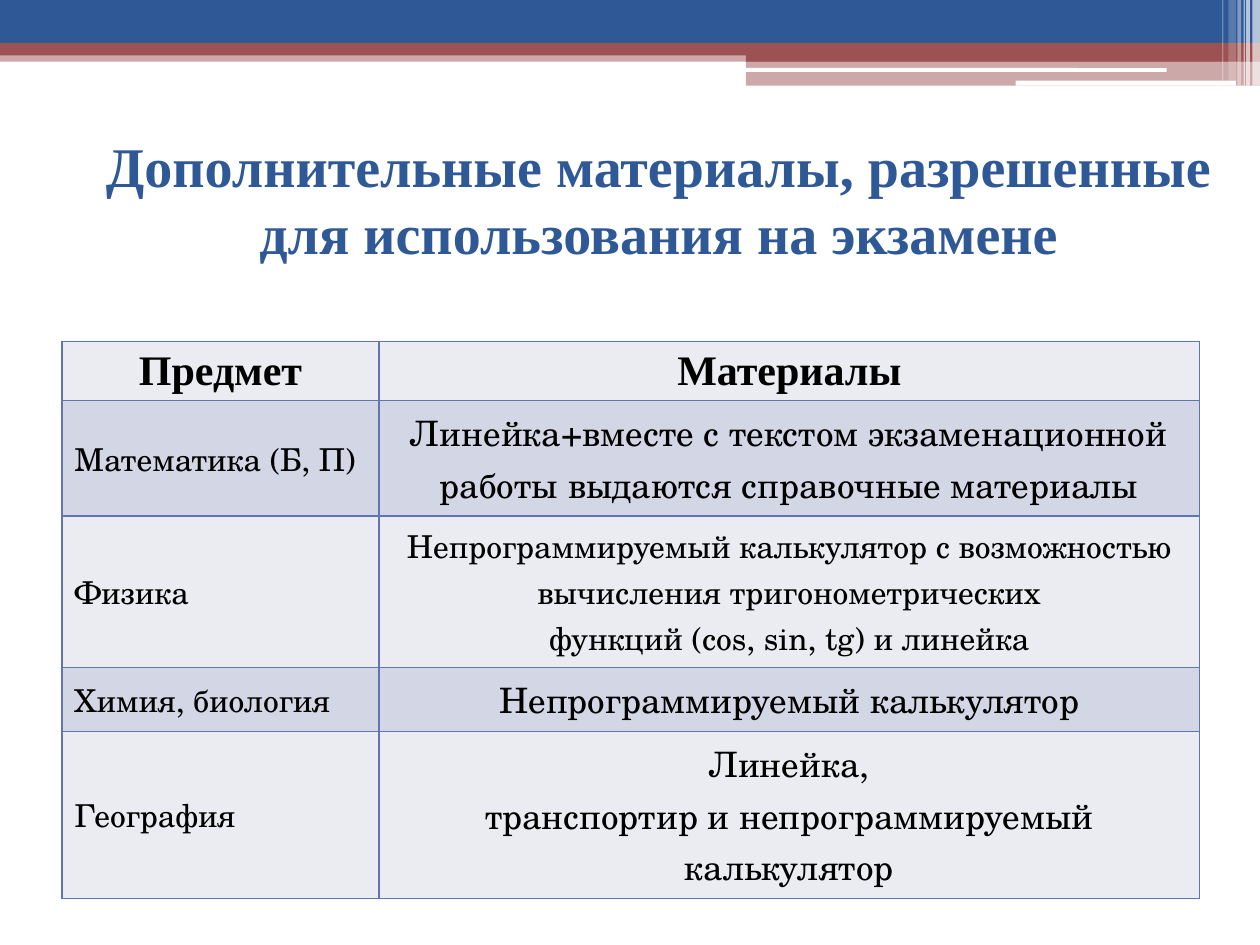
import pptx
import pptx.util
import pptx.dml.color
import pptx.enum.shapes
import pptx.enum.text
import pptx.oxml
import pptx.oxml.ns
import lxml.etree

Inches = pptx.util.Inches
Pt = pptx.util.Pt
Align = pptx.enum.text.PP_ALIGN
Anchor = pptx.enum.text.MSO_ANCHOR
Preset = pptx.enum.shapes.MSO_SHAPE

BLUE, RED, WHITE, BLACK = "2F5897", "9C5252", "FFFFFF", "000000"
BORDER, LIGHT, DARK = "6076B4", "EAECF2", "D2D6E5"
SERIF, SCHOOL = "Times New Roman", "TeX Gyre Schola"

TITLE = "Дополнительные материалы, разрешенные для использования на экзамене"

BANDS = [
    (0, 0.4, 10, 0.09, RED, 50),
    (0, 0, 10, 0.34, BLUE, 100),
    (0, 0.34, 10, 0.1, RED, 100),
    (5.92, 0.39, 4.08, 0.1, RED, 100),
    (5.92, 0.48, 4.08, 0.2, RED, 50),
]
ROUNDED_BARS = [
    (5.91, 0.54, 3.35, 0.03, WHITE, 100),
    (8.06, 0.64, 1.75, 0.04, WHITE, 100),
]
STRIPES = [
    (9.94, 0.06, 0.68, 65),
    (9.89, 0.03, 0.68, 65),
    (9.87, 0.01, 0.68, 60),
    (9.82, 0.03, 0.68, 40),
    (9.75, 0.06, 0.64, 20),
    (9.7, 0.01, 0.64, 30),
]

COLUMN_WIDTHS = [2.52, 6.51]
HEADER = ["Предмет", "Материалы"]
HEADER_HEIGHT = 0.47
SUBJECTS = [
    ("Математика (Б, П)", 0.72, 20,
     ["Линейка+вместе с текстом экзаменационной работы выдаются справочные материалы"]),
    ("Физика", 0.94, 18,
     ["Непрограммируемый калькулятор с возможностью вычисления тригонометрических",
      "функций (cos, sin, tg) и линейка"]),
    ("Химия, биология", 0.43, 20, ["Непрограммируемый калькулятор"]),
    ("География", 1.08, 20,
     ["Линейка,", "транспортир и непрограммируемый калькулятор"]),
]


def color(value):
    return pptx.dml.color.RGBColor.from_string(value)


def add_bar(page, preset, left, top, width, height, fill, opacity):
    bar = page.shapes.add_shape(
        preset, Inches(left), Inches(top), Inches(width), Inches(height))
    bar.shadow.inherit = False
    bar.line.fill.background()
    bar.fill.solid()
    bar.fill.fore_color.rgb = color(fill)
    if opacity < 100:
        tone = bar.fill._xPr.find(".//" + pptx.oxml.ns.qn("a:srgbClr"))
        alpha = lxml.etree.SubElement(tone, pptx.oxml.ns.qn("a:alpha"))
        alpha.set("val", str(opacity * 1000))


def write(frame, lines, size, font, ink, bold, align):
    for index, line in enumerate(lines):
        para = frame.add_paragraph() if index else frame.paragraphs[0]
        para.alignment = align
        span = para.add_run()
        span.text = line
        span.font.size = Pt(size)
        span.font.name = font
        span.font.bold = bold
        span.font.color.rgb = color(ink)


def outline(cell):
    properties = cell._tc.get_or_add_tcPr()
    for index, side in enumerate(("lnL", "lnR", "lnT", "lnB")):
        properties.insert(index, pptx.oxml.parse_xml(
            f'<a:{side} {pptx.oxml.ns.nsdecls("a")} w="12700"><a:solidFill>'
            f'<a:srgbClr val="{BORDER}"/></a:solidFill></a:{side}>'))


def fill_cell(cell, fill, anchor, *text):
    cell.fill.solid()
    cell.fill.fore_color.rgb = color(fill)
    cell.vertical_anchor = anchor
    outline(cell)
    write(cell.text_frame, *text)


def add_materials(page):
    heights = [HEADER_HEIGHT] + [subject[1] for subject in SUBJECTS]
    table = page.shapes.add_table(
        len(heights), len(COLUMN_WIDTHS), Inches(0.49), Inches(2.71),
        Inches(sum(COLUMN_WIDTHS)), Inches(sum(heights))).table
    for column, width in zip(table.columns, COLUMN_WIDTHS):
        column.width = Inches(width)
    for row, height in zip(table.rows, heights):
        row.height = Inches(height)
    for index, label in enumerate(HEADER):
        fill_cell(table.cell(0, index), LIGHT, Anchor.MIDDLE,
                  [label], 24, SERIF, BLACK, True, Align.CENTER)
    for index, (subject, _, size, materials) in enumerate(SUBJECTS, 1):
        fill = DARK if index % 2 else LIGHT
        fill_cell(table.cell(index, 0), fill, Anchor.MIDDLE,
                  [subject], 18, SCHOOL, BLACK, False, Align.LEFT)
        fill_cell(table.cell(index, 1), fill, Anchor.TOP,
                  materials, size, SCHOOL, BLACK, False, Align.CENTER)


def add_title(page):
    box = page.shapes.add_textbox(Inches(0.73), Inches(0.99), Inches(9), Inches(1.17))
    frame = box.text_frame
    frame.word_wrap = True
    frame.vertical_anchor = Anchor.MIDDLE
    frame.margin_left = frame.margin_right = Inches(0.05)
    write(frame, [TITLE], 32, SERIF, BLUE, True, Align.CENTER)


def main():
    deck = pptx.Presentation()
    deck.slide_width, deck.slide_height = Inches(10), Inches(7.5)
    page = deck.slides.add_slide(deck.slide_layouts[6])
    for band in BANDS:
        add_bar(page, Preset.RECTANGLE, *band)
    for bar in ROUNDED_BARS:
        add_bar(page, Preset.ROUNDED_RECTANGLE, *bar)
    for left, width, height, opacity in STRIPES:
        add_bar(page, Preset.RECTANGLE, left, 0, width, height, WHITE, opacity)
    add_materials(page)
    add_title(page)
    deck.save("out.pptx")


if __name__ == "__main__":
    main()
